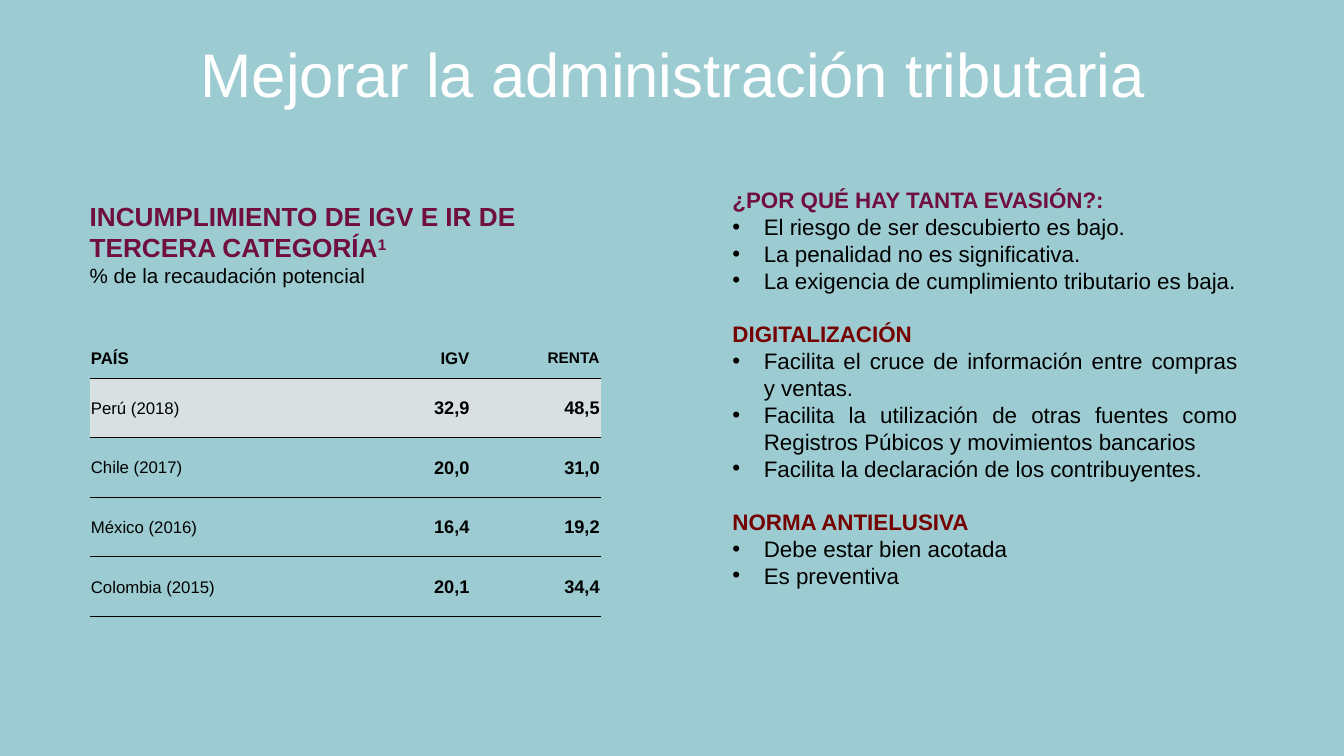
from dataclasses import dataclass

from lxml import etree
from pptx import Presentation
from pptx.dml.color import RGBColor
from pptx.enum.text import MSO_ANCHOR, MSO_AUTO_SIZE, PP_ALIGN
from pptx.oxml.ns import qn
from pptx.util import Cm, Pt

LEFT, RIGHT = PP_ALIGN.LEFT, PP_ALIGN.RIGHT
CENTER, JUSTIFY = PP_ALIGN.CENTER, PP_ALIGN.JUSTIFY
MIDDLE = MSO_ANCHOR.MIDDLE
FIXED, GROW = MSO_AUTO_SIZE.NONE, MSO_AUTO_SIZE.SHAPE_TO_FIT_TEXT

FONT = "Arial"
TEAL, WHITE, BLACK = "9CCCD2", "FFFFFF", "000000"
PLUM, WINE, GRAY = "700E3E", "750000", "D8E0E2"
PLAIN_STYLE = "{2D5ABB26-0587-4C30-8999-92F81FD0307C}"


@dataclass
class Box:
    left: float
    top: float
    width: float
    height: float

    def lengths(self) -> tuple:
        return Cm(self.left), Cm(self.top), Cm(self.width), Cm(self.height)


@dataclass
class Topic:
    title: str
    color: str
    points: list[str]


TITLE = Box(0.89, 0.94, 32.16, 2.01)
HEADING = Box(2.26, 5.05, 12.85, 1.55)
TABLE = Box(2.26, 8.51, 12.88, 7.02)
TOPICS = Box(18.21, 4.57, 13.23, 10.52)

COLUMNS = [6.32, 3.28, 3.28]
HEAD_ROW, BODY_ROW = 1.02, 1.5
ROWS = [
    ["PAÍS", "IGV", "RENTA"],
    ["Perú (2018)", "32,9", "48,5"],
    ["Chile (2017)", "20,0", "31,0"],
    ["México (2016)", "16,4", "19,2"],
    ["Colombia (2015)", "20,1", "34,4"],
]

LIST = [
    Topic("¿POR QUÉ HAY TANTA EVASIÓN?:", PLUM, [
        "El riesgo de ser descubierto es bajo.",
        "La penalidad no es significativa.",
        "La exigencia de cumplimiento tributario es baja.",
    ]),
    Topic("DIGITALIZACIÓN", WINE, [
        "Facilita el cruce de información entre compras y ventas.",
        "Facilita la utilización de otras fuentes como Registros Púbicos y movimientos bancarios",
        "Facilita la declaración de los contribuyentes.",
    ]),
    Topic("NORMA ANTIELUSIVA", WINE, [
        "Debe estar bien acotada",
        "Es preventiva",
    ]),
]


def paint(target, color: str) -> None:
    target.rgb = RGBColor.from_string(color)


def fill(target, color: str) -> None:
    target.fill.solid()
    paint(target.fill.fore_color, color)


def add_run(para, text: str, size: float, color: str = BLACK, bold: bool = False):
    run = para.add_run()
    run.text = text
    run.font.name = FONT
    run.font.size = Pt(size)
    run.font.bold = bold
    paint(run.font.color, color)
    return run


def next_para(frame, first: bool):
    return frame.paragraphs[0] if first else frame.add_paragraph()


def add_bullet(para) -> None:
    props = para._p.get_or_add_pPr()
    indent = Cm(0.79)
    props.set("marL", str(indent))
    props.set("indent", str(-indent))
    etree.SubElement(props, qn("a:buFont")).set("typeface", FONT)
    etree.SubElement(props, qn("a:buChar")).set("char", "•")


def add_rule(cell) -> None:
    line = etree.Element(qn("a:lnB"), w=str(Pt(0.5)))
    solid = etree.SubElement(line, qn("a:solidFill"))
    etree.SubElement(solid, qn("a:srgbClr")).set("val", BLACK)
    cell._tc.get_or_add_tcPr().insert(0, line)


def add_title(slide) -> None:
    title = slide.shapes.title
    title.left, title.top, title.width, title.height = TITLE.lengths()
    frame = title.text_frame
    frame.auto_size = FIXED
    frame.vertical_anchor = MIDDLE
    para = frame.paragraphs[0]
    para.alignment = CENTER
    para.line_spacing = 0.9
    add_run(para, "Mejorar la administración tributaria", 44, WHITE)


def add_heading(slide) -> None:
    frame = slide.shapes.add_textbox(*HEADING.lengths()).text_frame
    frame.word_wrap = True
    frame.margin_left = frame.margin_right = 0
    frame.margin_top = frame.margin_bottom = 0
    para = frame.paragraphs[0]
    add_run(para, "INCUMPLIMIENTO DE IGV E IR DE TERCERA CATEGORÍA", 18.7, PLUM, True)
    note = add_run(para, "1", 18.7, PLUM, True)
    note._r.get_or_add_rPr().set("baseline", "30000")
    add_run(frame.add_paragraph(), "% de la recaudación potencial", 14.7)


def add_rates(slide) -> None:
    frame = slide.shapes.add_table(len(ROWS), len(COLUMNS), *TABLE.lengths())
    table = frame.table
    table.first_row = table.horz_banding = False
    table._tbl.tblPr.find(qn("a:tableStyleId")).text = PLAIN_STYLE
    for column, width in zip(table.columns, COLUMNS):
        column.width = Cm(width)
    for i, values in enumerate(ROWS):
        table.rows[i].height = Cm(BODY_ROW if i else HEAD_ROW)
        for j, value in enumerate(values):
            cell = table.cell(i, j)
            cell.vertical_anchor = MIDDLE
            cell.margin_left = cell.margin_right = cell.margin_top = Cm(0.03)
            cell.margin_bottom = 0
            if i == 1:
                fill(cell, GRAY)
            else:
                cell.fill.background()
            add_rule(cell)
            para = cell.text_frame.paragraphs[0]
            para.alignment = RIGHT if j else LEFT
            size = 13 if i and j else 11 if j == 2 else 12
            add_run(para, value, size, bold=i == 0 or j > 0)


def add_topics(slide) -> None:
    frame = slide.shapes.add_textbox(*TOPICS.lengths()).text_frame
    frame.word_wrap = True
    frame.auto_size = GROW
    for i, topic in enumerate(LIST):
        para = next_para(frame, i == 0)
        para.alignment = JUSTIFY
        if i:
            para.space_before = Pt(19)
        add_run(para, topic.title, 16, topic.color, True)
        for point in topic.points:
            para = frame.add_paragraph()
            para.alignment = JUSTIFY
            add_bullet(para)
            add_run(para, point, 16)


def main() -> None:
    deck = Presentation()
    deck.slide_width, deck.slide_height = Cm(33.87), Cm(19.05)
    slide = deck.slides.add_slide(deck.slide_layouts[5])
    fill(slide.background, TEAL)
    add_title(slide)
    add_rates(slide)
    add_heading(slide)
    add_topics(slide)
    deck.save("out.pptx")


if __name__ == "__main__":
    main()
